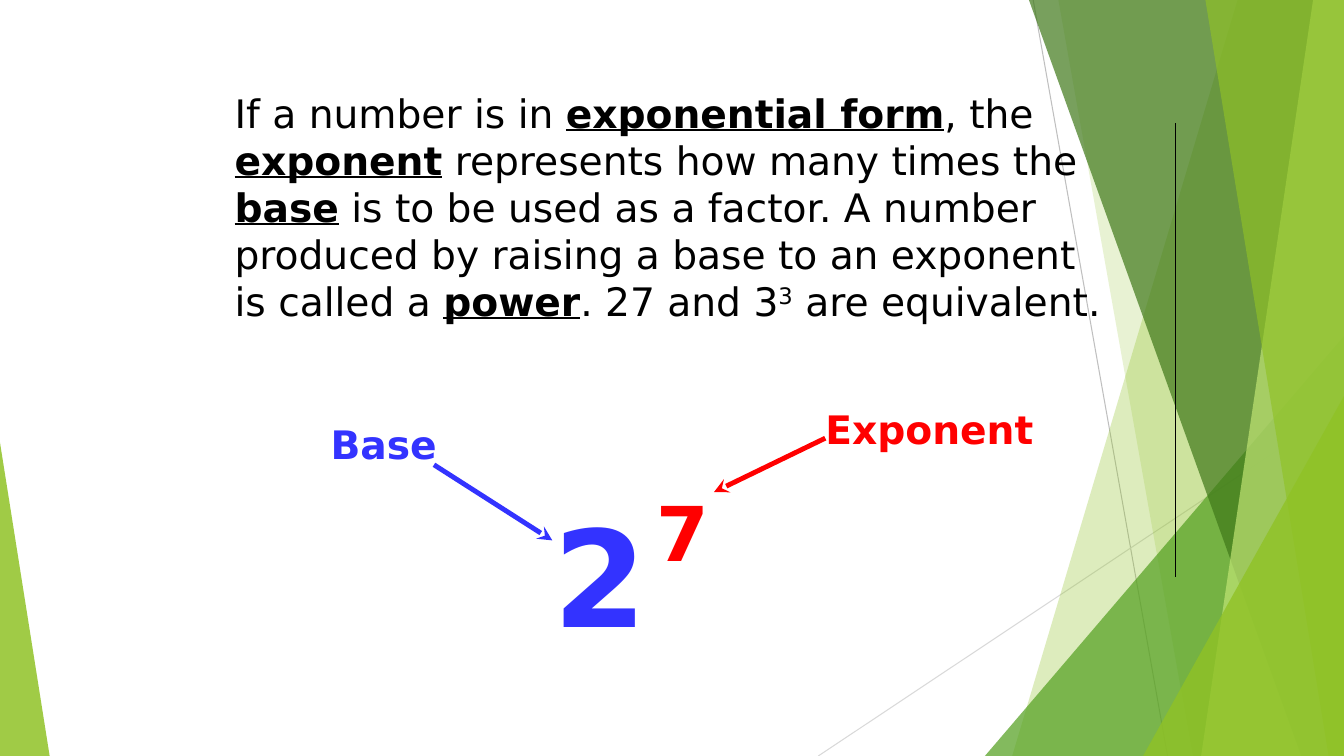
from lxml import etree
from pptx import Presentation
from pptx.dml.color import RGBColor
from pptx.enum.shapes import MSO_CONNECTOR, MSO_SHAPE
from pptx.enum.text import MSO_AUTO_SIZE
from pptx.oxml.ns import qn
from pptx.util import Pt

LINE = MSO_CONNECTOR.STRAIGHT
TRIANGLE = MSO_SHAPE.ISOSCELES_TRIANGLE
GROW = MSO_AUTO_SIZE.SHAPE_TO_FIT_TEXT

WIDE, HIGH = 960, 540
BLACK = RGBColor(0x00, 0x00, 0x00)
RED = RGBColor(0xFF, 0x00, 0x00)
BLUE = RGBColor(0x33, 0x33, 0xFF)
GRAY = RGBColor(0xBF, 0xBF, 0xBF)
PALE = RGBColor(0xD9, 0xD9, 0xD9)
LIME = RGBColor(0x90, 0xC2, 0x26)
GREEN = RGBColor(0x54, 0xA0, 0x21)
DARK = RGBColor(0x3F, 0x78, 0x19)
LIGHT = RGBColor(0xC0, 0xE4, 0x74)

KEY = {"bold": True, "underline": True}
RULE = [
    ("If a number is in ", {}),
    ("exponential form", KEY),
    (", the ", {}),
    ("exponent", KEY),
    (" represents how many times the ", {}),
    ("base", KEY),
    (" is to be used as a factor. A number produced by raising a base "
     "to an exponent is called a ", {}),
    ("power", KEY),
    (". 27 and 3", {}),
    ("3", {"raised": True}),
    (" are equivalent.", {}),
]


class Page:
    font = "DejaVu Sans"
    lead = 1.2

    def __init__(self, slide):
        self.shapes = slide.shapes

    def paint(self, shape, color, alpha):
        """Fill a shape with a see-through color, alpha in percent."""
        shape.shadow.inherit = False
        shape.line.fill.background()
        shape.fill.solid()
        shape.fill.fore_color.rgb = color
        tint = shape.fill._xPr.find(".//" + qn("a:srgbClr"))
        etree.SubElement(tint, qn("a:alpha"), val=str(alpha * 1000))

    def band(self, top, foot, color, alpha):
        """Draw a full-height band from a slanted edge to the right side."""
        pen = self.shapes.build_freeform(Pt(top), 0)
        pen.add_line_segments(
            [(Pt(x), Pt(y)) for x, y in
             ((WIDE, 0), (WIDE, HIGH), (foot, HIGH))], close=True)
        self.paint(pen.convert_to_shape(), color, alpha)

    def wedge(self, left, top, width, peak, color, alpha):
        """Draw a triangle that stands on the bottom edge."""
        shape = self.shapes.add_shape(
            TRIANGLE, Pt(left), Pt(top), Pt(width), Pt(HIGH - top))
        shape.adjustments[0] = peak
        self.paint(shape, color, alpha)

    def line(self, start, end, color, width=0.75, arrow=False):
        link = self.shapes.add_connector(
            LINE, *(Pt(n) for n in (*start, *end)))
        link.line.color.rgb = color
        link.line.width = Pt(width)
        if arrow:
            etree.SubElement(link.line._get_or_add_ln(),
                             qn("a:tailEnd"), type="stealth")
        etree.SubElement(link._element.spPr, qn("a:effectLst"))

    def text(self, box, runs, size=28, color=BLACK, bold=False, wrap=True):
        """Write a string, or a list of (string, format) runs."""
        frame = self.shapes.add_textbox(*(Pt(n) for n in box)).text_frame
        frame.word_wrap = wrap
        frame.auto_size = GROW
        para = frame.paragraphs[0]
        para.line_spacing = Pt(size * self.lead)
        if isinstance(runs, str):
            runs = [(runs, {})]
        for words, style in runs:
            run = para.add_run()
            run.text = words
            font = run.font
            font.name = self.font
            font.size = Pt(size)
            font.color.rgb = color
            font.bold = style.get("bold", bold)
            font.underline = style.get("underline", False)
            if style.get("raised"):
                font._element.set("baseline", "30000")


def backdrop(page):
    page.line((738, 0), (834, HIGH), GRAY)
    page.line((WIDE, 290), (584.5, HIGH), PALE)
    page.band(884, 723, LIME, 30)
    page.band(756, 852, LIME, 20)
    page.wedge(703.5, 240, 256.5, 1, GREEN, 72)
    page.band(735, 929.5, DARK, 70)
    page.band(938, 858, LIGHT, 70)
    page.band(861, 949, LIME, 65)
    page.wedge(816.5, 283, 143.5, 1, LIME, 80)
    page.wedge(0, 316, 35.5, 0, LIME, 85)


def main():
    deck = Presentation()
    deck.slide_width, deck.slide_height = Pt(WIDE), Pt(HIGH)
    page = Page(deck.slides.add_slide(deck.slide_layouts[6]))
    backdrop(page)
    page.text((160.5, 60, 635, 209), RULE)
    page.line((840, 88), (840, 412), BLACK)
    page.text((462, 343.5, 57, 72), "7", size=54, color=RED, bold=True)
    page.text((582.5, 286, 168, 41), "Exponent", color=RED, bold=True)
    page.text((229, 296.5, 156, 41), "Base", color=BLUE, bold=True)
    page.line((310, 332), (394.5, 386), BLUE, width=3.5, arrow=True)
    page.line((589.5, 313), (510, 351.5), RED, width=3.5, arrow=True)
    page.text((388, 348.5, 83, 122.5), "2", size=96, color=BLUE, bold=True,
              wrap=False)
    deck.save("out.pptx")


if __name__ == "__main__":
    main()
